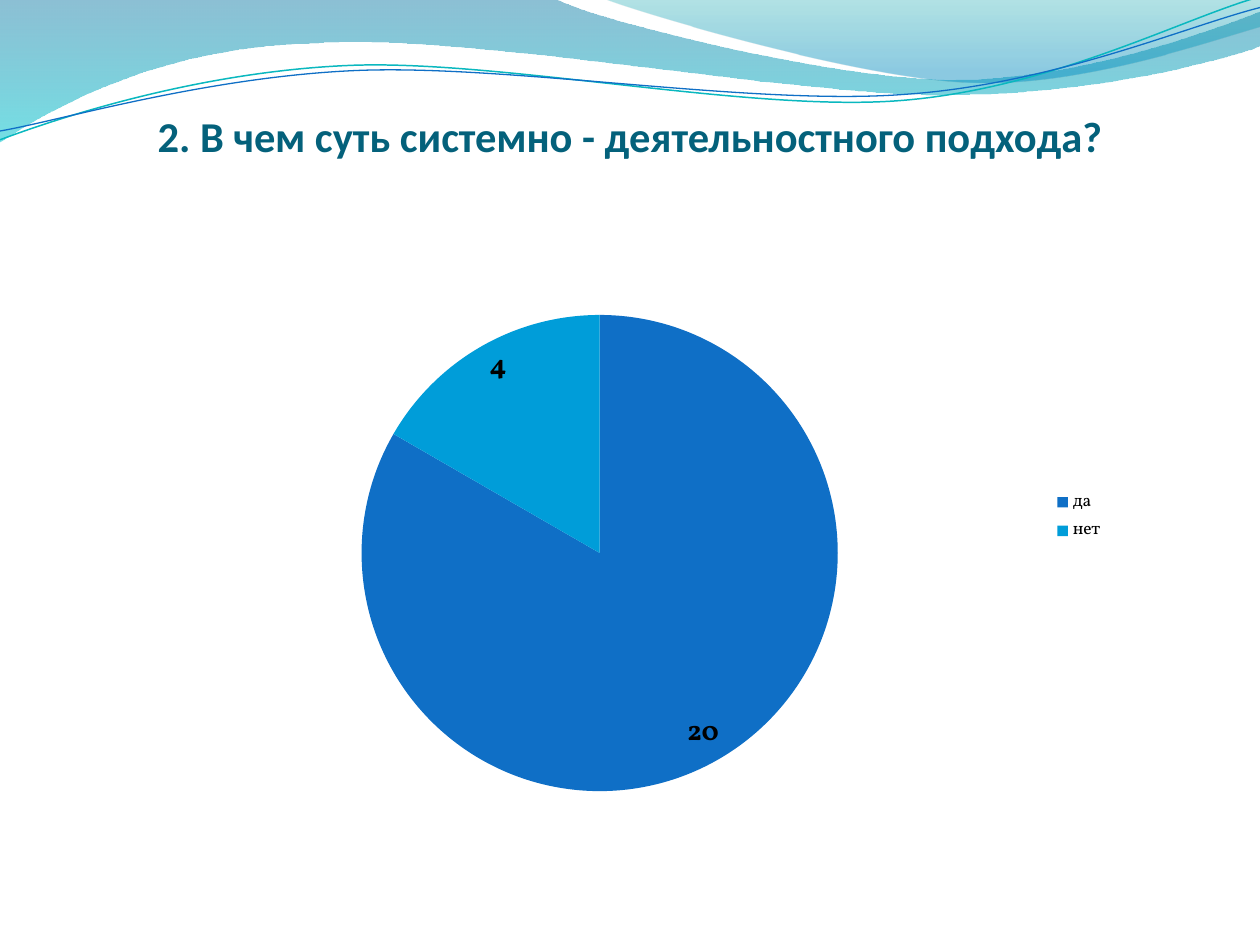
from lxml import etree
from pptx import Presentation
from pptx.chart.data import CategoryChartData
from pptx.dml.color import RGBColor
from pptx.enum.chart import XL_CHART_TYPE, XL_LABEL_POSITION, XL_LEGEND_POSITION
from pptx.enum.text import MSO_ANCHOR, PP_ALIGN
from pptx.oxml import parse_xml
from pptx.oxml.ns import nsdecls, qn
from pptx.util import Inches, Pt

PIE = XL_CHART_TYPE.PIE
BEST_FIT = XL_LABEL_POSITION.BEST_FIT
RIGHT = XL_LEGEND_POSITION.RIGHT
TOP, CENTER = MSO_ANCHOR.TOP, PP_ALIGN.CENTER

BLACK = RGBColor(0x00, 0x00, 0x00)
TITLE = RGBColor(0x04, 0x61, 0x7B)
BLUE = RGBColor(0x0F, 0x6F, 0xC6)
SKY = RGBColor(0x00, 0x9D, 0xD9)
TEAL = RGBColor(0x0A, 0xB8, 0xBF)
DEEP = RGBColor(0x00, 0x74, 0xA1)
CYAN = RGBColor(0x00, 0xC6, 0xCF)
SEA = RGBColor(0x00, 0xA1, 0xA9)
OCEAN = RGBColor(0x00, 0x8B, 0xBF)

prs = Presentation()
prs.slide_width, prs.slide_height = Inches(10), Inches(7.5)
s = prs.slides.add_slide(prs.slide_layouts[6])


def add_curve(start, segments, close):
    """Draw a path of straight (2 numbers) and cubic (6 numbers) segments."""
    points = [(Inches(x), Inches(y)) for seg in segments
              for x, y in zip(seg[::2], seg[1::2])]
    fb = s.shapes.build_freeform(Inches(start[0]), Inches(start[1]))
    fb.add_line_segments(points, close=close)
    sp = fb.convert_to_shape()
    sp.shadow.inherit = False
    # Join each three control points into one cubic segment
    lines = iter(list(sp._element.spPr.iter(qn("a:lnTo"))))
    for seg in segments:
        group = [next(lines) for _ in seg[::2]]
        if len(group) == 3:
            cubic = etree.Element(qn("a:cubicBezTo"))
            group[0].addprevious(cubic)
            for line in group:
                cubic.append(line[0])
                line.getparent().remove(line)
    return sp


# Translucent waves: start, segments, (position, colour, opacity %) stops
waves = [
    ((0, 0),
     [(4.4, -0.01), (4.76, 0.17, 6.64, 0.63, 7.58, 0.63),
      (8.53, 0.63, 9.58, 0.26, 10, 0.09), (10.01, 0.36),
      (9.83, 0.44, 8.7, 0.76, 7.46, 0.75), (6.22, 0.75, 3.82, 0.28, 2.57, 0.34),
      (1.29, 0.36, 0.46, 0.83, -0.01, 1.13)],
     [(0, DEEP, 45), (1, CYAN, 55)]),
    ((4.79, -0.01),
     [(5.09, 0.11, 6.82, 0.62, 7.69, 0.65), (8.56, 0.69, 9.61, 0.32, 10, 0.21), (10, 0)],
     [(0, SEA, 30), (0.8, OCEAN, 45)]),
]
for start, segments, stops in waves:
    sp = add_curve(start, segments, True)
    sp.line.fill.background()
    sp.fill.gradient()
    sp.fill.gradient_angle = 270
    for stop, (position, color, _) in zip(sp.fill.gradient_stops, stops):
        stop.position = position
        stop.color.rgb = color
    for clr, (_, _, opacity) in zip(sp._element.spPr.iter(qn("a:srgbClr")), stops):
        etree.SubElement(clr, qn("a:alpha")).set("val", str(opacity * 1000))

# Thin wave lines
wave_lines = [
    ((0, 1.11),
     [(0.48, 0.93, 1.58, 0.57, 2.77, 0.52), (3.95, 0.47, 5.93, 0.89, 7.13, 0.8),
      (8.33, 0.71, 9.38, 0.15, 9.98, -0.02)], TEAL, 0.85),
    ((0, 1.04),
     [(0.47, 0.96, 1.64, 0.61, 2.83, 0.56), (4.03, 0.51, 5.97, 0.84, 7.17, 0.75),
      (8.36, 0.67, 9.41, 0.21, 10, 0.06)], BLUE, 0.75),
]
for start, segments, color, width in wave_lines:
    sp = add_curve(start, segments, False)
    sp.fill.background()
    sp.line.color.rgb = color
    sp.line.width = Pt(width)

# Title
sp = s.shapes.add_textbox(Inches(0.5), Inches(0.77), Inches(9), Inches(1.25))
tf = sp.text_frame
tf.word_wrap = True
tf.vertical_anchor = TOP
tf.margin_left = tf.margin_right = tf.margin_bottom = 0
tf.margin_top = Inches(0.1)
p = tf.paragraphs[0]
p.alignment = CENTER
r = p.add_run()
r.text = "2. В чем суть системно - деятельностного подхода?"
r.font.name, r.font.size, r.font.bold = "Calibri", Pt(24.3), True
r.font.color.rgb = TITLE

# Pie chart
chart_w, chart_h = 7.48, 4.8
data = CategoryChartData()
data.categories = ["да", "нет"]
data.add_series("Series 1", (20, 4))
chart = s.shapes.add_chart(PIE, Inches(1.38), Inches(1.7),
                           Inches(chart_w), Inches(chart_h), data).chart
chart.has_title = False
chart.font.name, chart.font.size = "Vollkorn", Pt(10)
chart.font.color.rgb = BLACK
chart.has_legend = True
chart.legend.position = RIGHT
chart.legend.include_in_layout = False

plot = chart.plots[0]
plot.vary_by_categories = True
for i, color in enumerate((BLUE, SKY)):
    fill = plot.series[0].points[i].format.fill
    fill.solid()
    fill.fore_color.rgb = color
plot.has_data_labels = True
labels = plot.data_labels
labels.show_value = True
labels.show_percentage = False
labels.position = BEST_FIT
labels.font.name, labels.font.size, labels.font.bold = "Vollkorn", Pt(16), True
labels.font.color.rgb = BLACK

# Fixed inner plot area, as shares of the chart size
plot_area = chart._chartSpace.chart.plotArea
for old in plot_area.findall(qn("c:layout")):
    plot_area.remove(old)
box = "".join(f'<c:{k} val="{v}"/>' for k, v in [
    ("layoutTarget", "inner"), ("xMode", "edge"), ("yMode", "edge"),
    ("x", 0.58 / chart_w), ("y", 0.8 / chart_h),
    ("w", 5.6 / chart_w), ("h", 3.78 / chart_h)])
plot_area.insert(0, parse_xml(
    f'<c:layout {nsdecls("c")}><c:manualLayout>{box}</c:manualLayout></c:layout>'))

prs.save("out.pptx")
